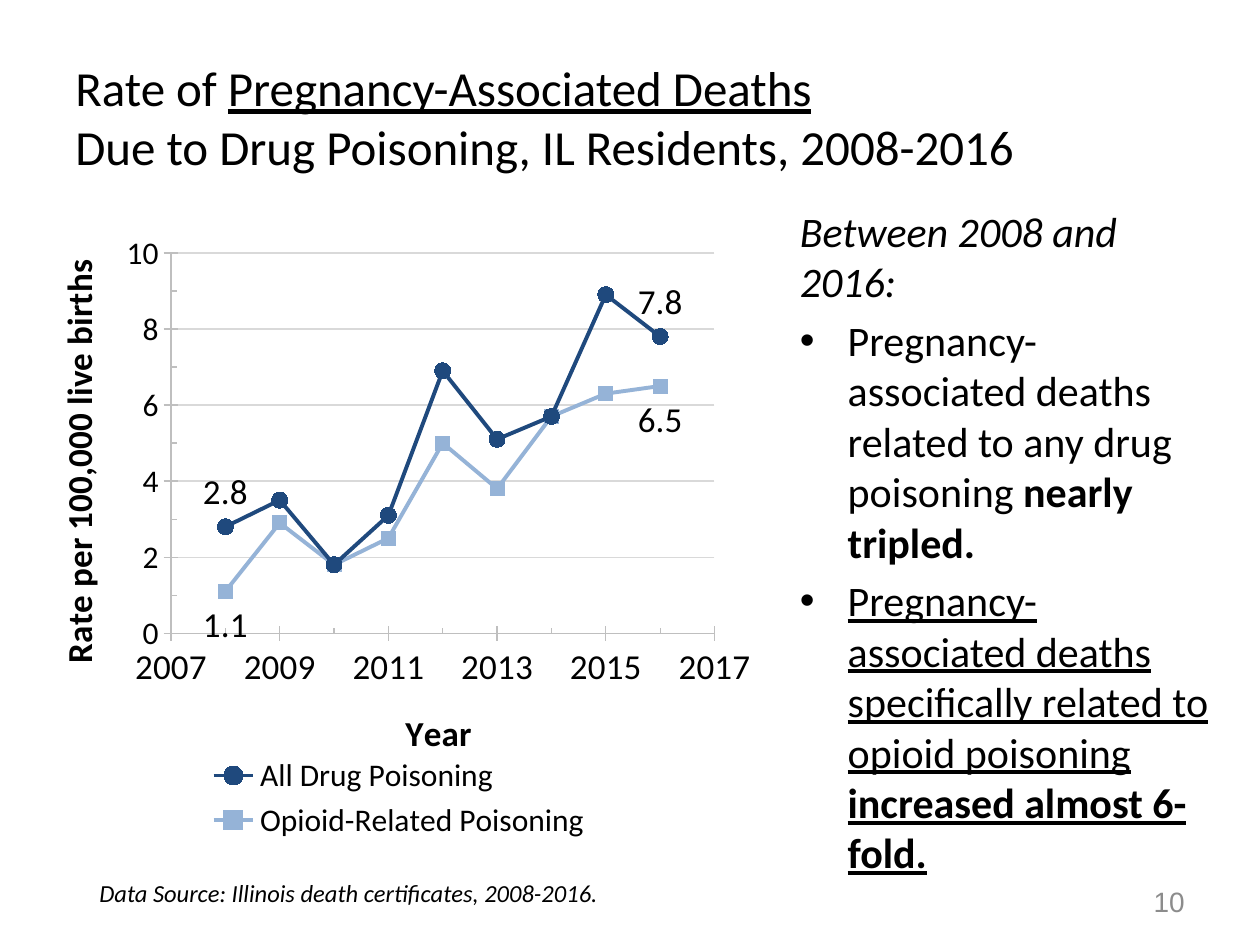
from lxml import etree
from pptx import Presentation
from pptx.chart.data import XyChartData
from pptx.dml.color import RGBColor
from pptx.enum.chart import (XL_CHART_TYPE, XL_LABEL_POSITION, XL_LEGEND_POSITION,
                             XL_MARKER_STYLE, XL_TICK_MARK)
from pptx.enum.text import MSO_ANCHOR, PP_ALIGN
from pptx.oxml.ns import qn
from pptx.util import Pt

PX = 9144
FONT = "Calibri"
BLACK, GRAY, AXIS, GRID = "000000", "8C8C8C", "BFBFBF", "D9D9D9"
TOP, MIDDLE = MSO_ANCHOR.TOP, MSO_ANCHOR.MIDDLE
LEFT, RIGHT = PP_ALIGN.LEFT, PP_ALIGN.RIGHT
CROSS, INSIDE = XL_TICK_MARK.CROSS, XL_TICK_MARK.INSIDE

YEARS = range(2008, 2017)
SERIES = [
    ("All Drug Poisoning", [2.8, 3.5, 1.8, 3.1, 6.9, 5.1, 5.7, 8.9, 7.8],
     "1F497D", XL_MARKER_STYLE.CIRCLE, 9, XL_LABEL_POSITION.ABOVE),
    ("Opioid-Related Poisoning", [1.1, 2.9, 1.8, 2.5, 5.0, 3.8, 5.7, 6.3, 6.5],
     "95B3D7", XL_MARKER_STYLE.SQUARE, 8, XL_LABEL_POSITION.BELOW),
]


def color(value):
    return RGBColor.from_string(value)


def emu(box):
    return [length * PX for length in box]


def style_font(font, size, name=FONT, fill=BLACK):
    font.size, font.name = Pt(size), name
    font.color.rgb = color(fill)


def add_text_frame(slide, box, anchor=TOP):
    text_frame = slide.shapes.add_textbox(*emu(box)).text_frame
    text_frame.word_wrap = True
    text_frame.vertical_anchor = anchor
    return text_frame


def add_run(paragraph, text, bold=None, underline=None):
    run = paragraph.add_run()
    run.text = text
    run.font.bold, run.font.underline = bold, underline


def add_bullet(paragraph, indent):
    properties = paragraph._p.get_or_add_pPr()
    properties.set("marL", str(indent * PX))
    properties.set("indent", str(-indent * PX))
    etree.SubElement(properties, qn("a:buFont"), typeface="Arial")
    etree.SubElement(properties, qn("a:buChar"), char="•")


def add_title(slide, box):
    paragraph = add_text_frame(slide, box, MIDDLE).paragraphs[0]
    add_run(paragraph, "Rate of ")
    add_run(paragraph, "Pregnancy-Associated Deaths", underline=True)
    paragraph.add_line_break()
    add_run(paragraph, "Due to Drug Poisoning, IL Residents, 2008-2016")
    style_font(paragraph.font, 28)


def add_findings(slide, box):
    text_frame = add_text_frame(slide, box)
    heading = text_frame.paragraphs[0]
    add_run(heading, "Between 2008 and 2016:")
    style_font(heading.font, 24)
    heading.font.italic = True
    findings = [
        ("Pregnancy-associated deaths related to any drug poisoning ",
         "nearly tripled.", None),
        ("Pregnancy-associated deaths specifically related to opioid poisoning ",
         "increased almost 6-fold.", True),
    ]
    for finding, change, underline in findings:
        paragraph = text_frame.add_paragraph()
        paragraph.space_before = Pt(4.8)
        add_bullet(paragraph, 38)
        add_run(paragraph, finding, underline=underline)
        add_run(paragraph, change, bold=True, underline=underline)
        style_font(paragraph.font, 24)


def add_line_of_text(slide, box, text, size, name=FONT, fill=BLACK,
                     anchor=TOP, align=LEFT, italic=None):
    paragraph = add_text_frame(slide, box, anchor).paragraphs[0]
    add_run(paragraph, text)
    paragraph.alignment = align
    style_font(paragraph.font, size, name, fill)
    paragraph.font.italic = italic


def place_plot(chart, x, y, width, height):
    plot_area = chart._chartSpace.chart.plotArea
    for old in plot_area.findall(qn("c:layout")):
        plot_area.remove(old)
    layout = etree.Element(qn("c:layout"))
    plot_area.insert(0, layout)
    manual = etree.SubElement(layout, qn("c:manualLayout"))
    settings = [("layoutTarget", "inner"), ("xMode", "edge"), ("yMode", "edge"),
                ("x", x), ("y", y), ("w", width), ("h", height)]
    for tag, value in settings:
        etree.SubElement(manual, qn(f"c:{tag}"), val=str(value))


def style_axis(axis, title, size, minimum, maximum):
    axis.minimum_scale, axis.maximum_scale = minimum, maximum
    axis.major_unit, axis.minor_unit = 2, 1
    axis.major_tick_mark, axis.minor_tick_mark = CROSS, INSIDE
    axis.has_major_gridlines = False
    axis.format.line.color.rgb = color(AXIS)
    axis.format.line.width = Pt(0.75)
    axis.tick_labels.number_format = "0"
    axis.tick_labels.number_format_is_linked = False
    style_font(axis.tick_labels.font, size)
    text_frame = axis.axis_title.text_frame
    text_frame.text = title
    font = text_frame.paragraphs[0].font
    style_font(font, 20)
    font.bold = True


def add_rate_chart(slide, box):
    data = XyChartData()
    for name, rates, *_ in SERIES:
        points = data.add_series(name)
        for year, rate in zip(YEARS, rates):
            points.add_data_point(year, rate)
    chart = slide.shapes.add_chart(XL_CHART_TYPE.XY_SCATTER_LINES, *emu(box), data).chart
    chart.has_title = False
    style_font(chart.font, 20)
    place_plot(chart, 0.19, 0.05, 0.74, 0.61)

    style_axis(chart.category_axis, "Year", 20, 2007, 2017)
    value_axis = chart.value_axis
    style_axis(value_axis, "Rate per 100,000 live births", 18, 0, 10)
    value_axis.has_major_gridlines = True
    grid_line = value_axis.major_gridlines.format.line
    grid_line.color.rgb = color(GRID)
    grid_line.width = Pt(0.75)

    chart.has_legend = True
    chart.legend.position = XL_LEGEND_POSITION.BOTTOM
    chart.legend.include_in_layout = False
    style_font(chart.legend.font, 18)

    plot = chart.plots[0]
    plot.vary_by_categories = False
    for series, (_, rates, fill, marker, size, position) in zip(plot.series, SERIES):
        series.format.line.color.rgb = color(fill)
        series.format.line.width = Pt(2.25)
        series.marker.style, series.marker.size = marker, size
        series.marker.format.fill.solid()
        series.marker.format.fill.fore_color.rgb = color(fill)
        series.marker.format.line.color.rgb = color(fill)
        for index in (0, len(rates) - 1):
            series.points[index].data_label.position = position


def main():
    presentation = Presentation()
    presentation.slide_width, presentation.slide_height = emu((1000, 750))
    slide = presentation.slides.add_slide(presentation.slide_layouts[6])
    add_title(slide, (50, 30, 900, 125))
    add_findings(slide, (625, 158, 344, 495))
    add_line_of_text(slide, (717, 695, 233, 40), "10", 16, "Arial", GRAY, MIDDLE, RIGHT)
    add_rate_chart(slide, (25, 176, 583, 495))
    add_line_of_text(slide, (69, 692, 637, 44),
                     "Data Source: Illinois death certificates, 2008-2016.", 14, italic=True)
    presentation.save("out.pptx")


if __name__ == "__main__":
    main()
